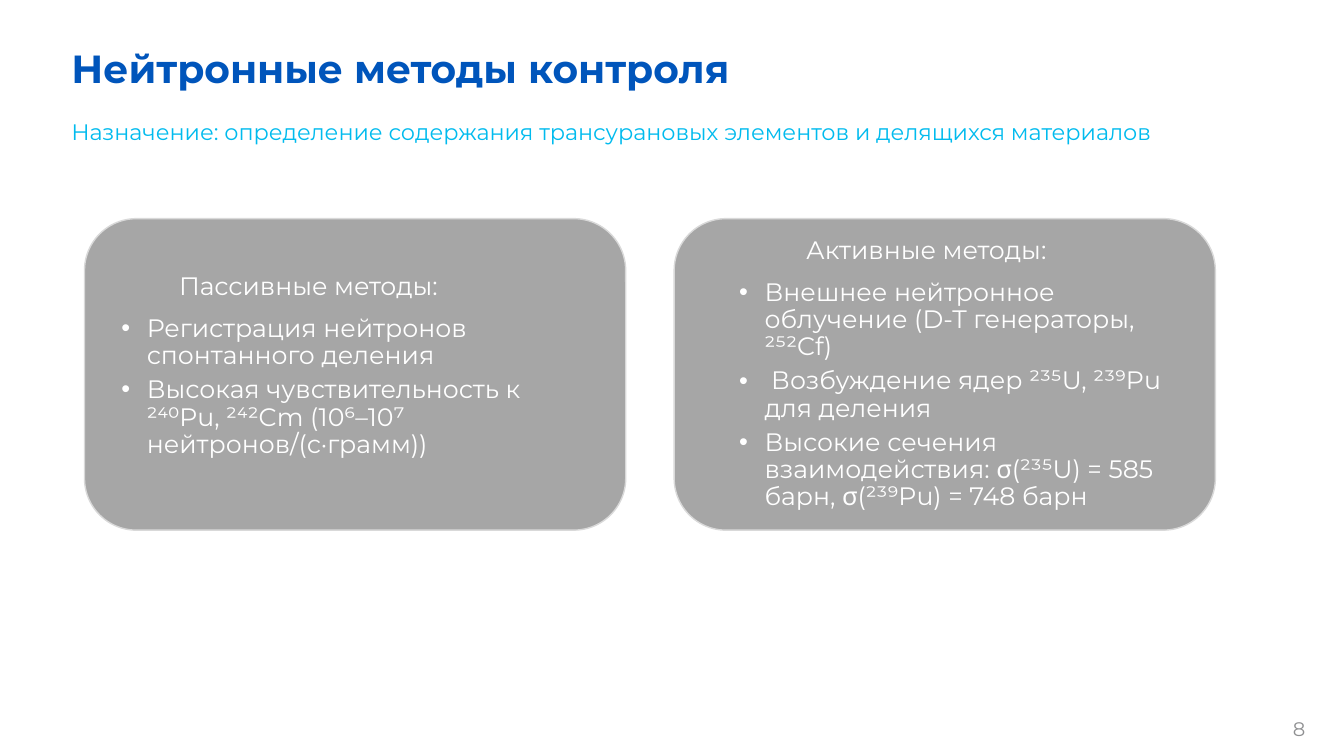
from lxml import etree
from pptx import Presentation
from pptx.dml.color import RGBColor
from pptx.enum.shapes import MSO_SHAPE
from pptx.enum.text import MSO_ANCHOR, PP_ALIGN
from pptx.oxml.ns import qn
from pptx.util import Cm, Pt

FONT = "Montserrat"
BLUE = RGBColor(0x00, 0x55, 0xBB)
CYAN = RGBColor(0x00, 0xBB, 0xEE)
WHITE = RGBColor(0xFF, 0xFF, 0xFF)
CARD_GRAY = RGBColor(0xA6, 0xA6, 0xA6)
BORDER_GRAY = RGBColor(0xD9, 0xD9, 0xD9)
NUMBER_GRAY = RGBColor(0x8F, 0x90, 0x92)

presentation = Presentation()
presentation.slide_width = Cm(33.87)
presentation.slide_height = Cm(19.05)
slide = presentation.slides.add_slide(presentation.slide_layouts[6])


def add_text_frame(left, top, width, height):
    box = slide.shapes.add_textbox(Cm(left), Cm(top), Cm(width), Cm(height))
    box.text_frame.word_wrap = True
    return box.text_frame


def add_text(paragraph, text, size, color, bold=False):
    run = paragraph.add_run()
    run.text = text
    run.font.name = FONT
    run.font.size = Pt(size)
    run.font.color.rgb = color
    run.font.bold = bold


title = add_text_frame(1.55, 0.99, 25.55, 1.45)
title.vertical_anchor = MSO_ANCHOR.MIDDLE
add_text(title.paragraphs[0], "Нейтронные методы контроля", 28, BLUE, bold=True)

purpose = add_text_frame(1.55, 2.84, 30.25, 1.4)
add_text(
    purpose.paragraphs[0],
    "Назначение: определение содержания трансурановых элементов и делящихся материалов",
    16,
    CYAN,
)

methods = [
    (2.13, 1.55, 6.68, 5.05, "Пассивные методы:", [
        "Регистрация нейтронов спонтанного деления",
        "Высокая чувствительность к ²⁴⁰Pu, ²⁴²Cm (10⁶–10⁷ нейтронов/(с·грамм))",
    ]),
    (16.99, 17.12, 5.77, 7.29, "Активные методы:", [
        "Внешнее нейтронное облучение (D-T генераторы, ²⁵²Cf)",
        " Возбуждение ядер ²³⁵U, ²³⁹Pu для деления",
        "Высокие сечения взаимодействия: σ(²³⁵U) = 585 барн, σ(²³⁹Pu) = 748 барн",
    ]),
]

for card_left, text_left, text_top, text_height, heading, points in methods:
    card = slide.shapes.add_shape(
        MSO_SHAPE.ROUNDED_RECTANGLE, Cm(card_left), Cm(5.51), Cm(13.64), Cm(7.85)
    )
    card.shadow.inherit = False
    card.fill.solid()
    card.fill.fore_color.rgb = CARD_GRAY
    card.line.color.rgb = BORDER_GRAY
    card.line.width = Pt(1)

    frame = add_text_frame(text_left, text_top, 12.45, text_height)
    paragraph = frame.paragraphs[0]
    paragraph.alignment = PP_ALIGN.CENTER
    paragraph.space_after = Pt(6)
    add_text(paragraph, heading, 18, WHITE)

    for point in points:
        paragraph = frame.add_paragraph()
        properties = paragraph._p.get_or_add_pPr()
        properties.set("marL", str(Cm(1.9)))
        properties.set("indent", str(-Cm(0.64)))
        etree.SubElement(properties, qn("a:buFont"), typeface="Arial")
        etree.SubElement(properties, qn("a:buChar"), char="•")
        paragraph.level = 1
        paragraph.line_spacing = 0.9
        paragraph.space_before = Pt(5)
        add_text(paragraph, point, 18, WHITE)

page_number = add_text_frame(32.33, 17.93, 1.14, 0.86)
add_text(page_number.paragraphs[0], "8", 14, NUMBER_GRAY)

presentation.save("out.pptx")
